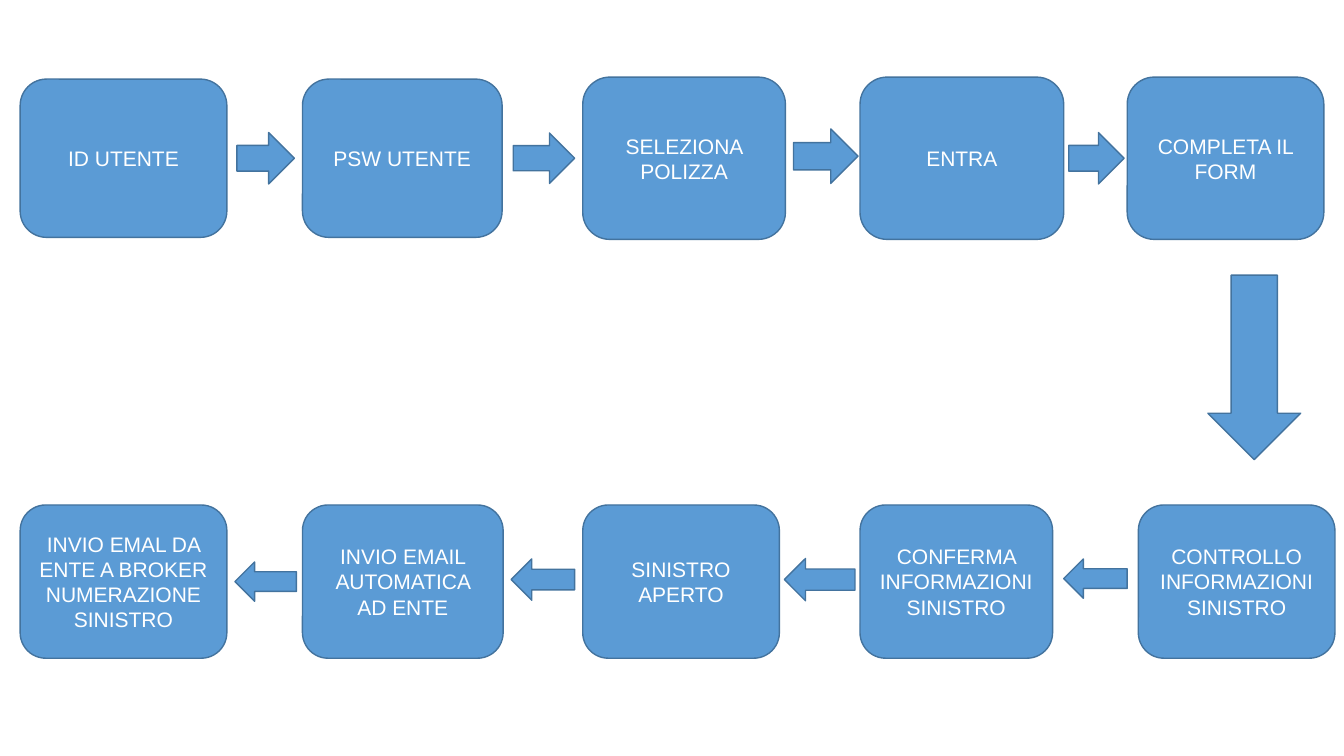
import pptx
import pptx.dml.color
import pptx.enum.shapes
import pptx.enum.text
import pptx.util

Inches = pptx.util.Inches
SHAPE = pptx.enum.shapes.MSO_SHAPE
COLORS = {"fill": "5B9BD5", "line": "43739E", "text": "FFFFFF"}
FONT = "Arial"
COLUMNS = [0.2, 3, 5.78, 8.53]

LOGIN_STEPS = [
    ("ID UTENTE", COLUMNS[0], 2.05, 1.57),
    ("PSW UTENTE", COLUMNS[1], 1.98, 1.57),
    ("SELEZIONA POLIZZA", COLUMNS[2], 2.01, 1.61),
    ("ENTRA", COLUMNS[3], 2.02, 1.61),
    ("COMPLETA IL FORM", 11.18, 1.95, 1.61),
]
LOGIN_ARROWS = [
    (2.35, 0, 0.57, 0.51),
    (5.09, 0, 0.61, 0.5),
    (7.87, -0.02, 0.64, 0.54),
    (10.6, 0, 0.55, 0.51),
]
CLAIM_STEPS = [
    ("INVIO EMAL DA ENTE A BROKER NUMERAZIONE SINISTRO", COLUMNS[0], 2.05, 1.52),
    ("INVIO EMAIL AUTOMATICA AD ENTE", COLUMNS[1], 1.99, 1.52),
    ("SINISTRO APERTO", COLUMNS[2], 1.95, 1.52),
    ("CONFERMA INFORMAZIONI SINISTRO", COLUMNS[3], 1.91, 1.52),
    ("CONTROLLO INFORMAZIONI SINISTRO", 11.29, 1.95, 1.52),
]
CLAIM_ARROWS = [
    (2.33, 0, 0.61, 0.39),
    (5.07, -0.02, 0.63, 0.41),
    (7.78, -0.02, 0.7, 0.42),
    (10.55, -0.03, 0.63, 0.39),
]


def color(name):
    """Return a named colour of the palette."""
    return pptx.dml.color.RGBColor.from_string(COLORS[name])


def add_block(page, kind, left, top, width, height):
    """Add a filled and outlined shape."""
    block = page.shapes.add_shape(
        kind, Inches(left), Inches(top), Inches(width), Inches(height))
    block.shadow.inherit = False
    block.fill.solid()
    block.fill.fore_color.rgb = color("fill")
    block.line.color.rgb = color("line")
    block.line.width = pptx.util.Pt(1)
    return block


def add_step(page, label, left, top, width, height):
    """Add a rounded box with a centred label."""
    step = add_block(page, SHAPE.ROUNDED_RECTANGLE, left, top, width, height)
    frame = step.text_frame
    frame.word_wrap = True
    frame.vertical_anchor = pptx.enum.text.MSO_ANCHOR.MIDDLE
    frame.text = label
    para = frame.paragraphs[0]
    para.alignment = pptx.enum.text.PP_ALIGN.CENTER
    font = para.runs[0].font
    font.name = FONT
    font.size = pptx.util.Pt(15)
    font.color.rgb = color("text")


def add_row(page, middle, steps, arrows, arrow_kind):
    """Add a row of steps and arrows centred on a horizontal line."""
    for label, left, width, height in steps:
        add_step(page, label, left, middle - height / 2, width, height)
    for left, shift, width, height in arrows:
        top = middle + shift - height / 2
        add_block(page, arrow_kind, left, top, width, height)


def main():
    """Build the claim process slide."""
    deck = pptx.Presentation()
    deck.slide_width = Inches(13.33)
    deck.slide_height = Inches(7.5)
    page = deck.slides.add_slide(deck.slide_layouts[6])
    add_row(page, 1.57, LOGIN_STEPS, LOGIN_ARROWS, SHAPE.RIGHT_ARROW)
    add_block(page, SHAPE.DOWN_ARROW, 11.98, 2.73, 0.92, 1.83)
    add_row(page, 5.77, CLAIM_STEPS, CLAIM_ARROWS, SHAPE.LEFT_ARROW)
    deck.save("out.pptx")


if __name__ == "__main__":
    main()
